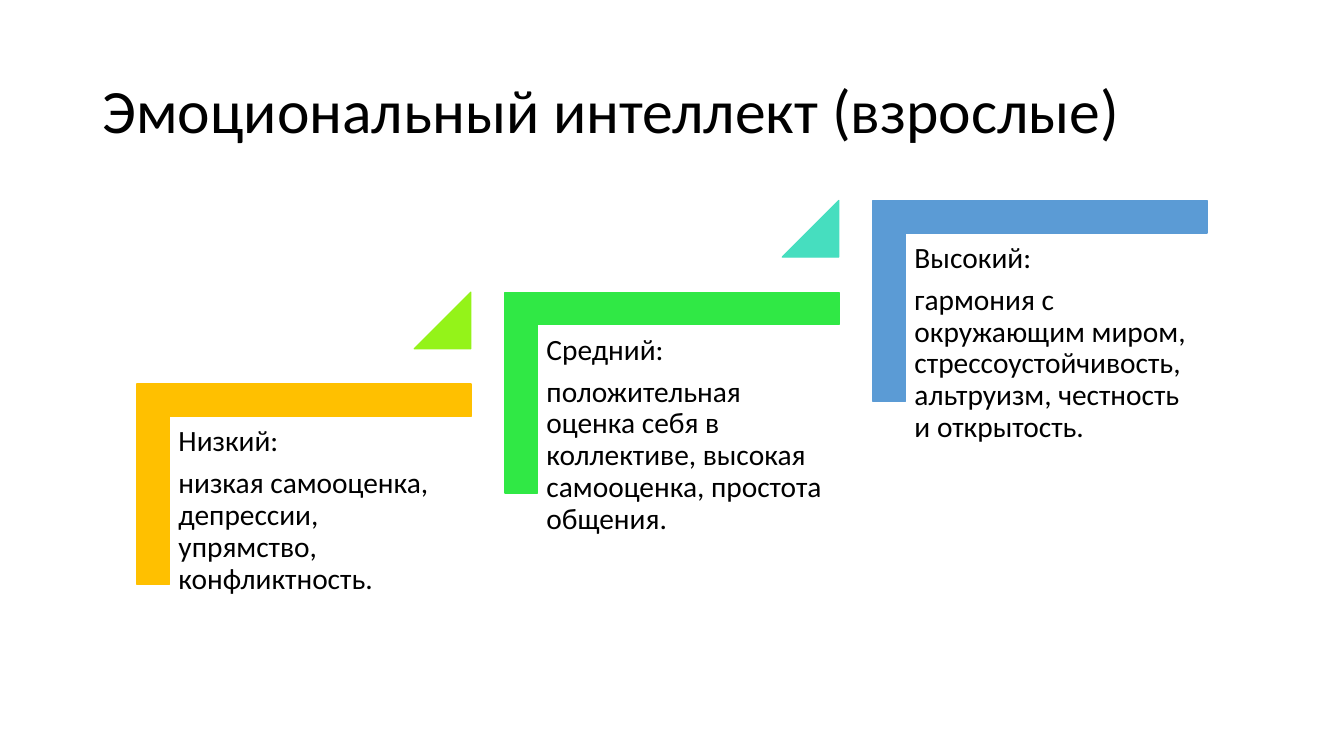
from pptx import Presentation
from pptx.dml.color import RGBColor
from pptx.enum.shapes import MSO_SHAPE
from pptx.enum.text import MSO_ANCHOR, PP_ALIGN
from pptx.util import Pt

PX = 9144
BLACK = RGBColor(0x00, 0x00, 0x00)
AMBER = RGBColor(0xFF, 0xC0, 0x00)
LIME = RGBColor(0x94, 0xF3, 0x19)
GREEN = RGBColor(0x30, 0xE8, 0x45)
TEAL = RGBColor(0x46, 0xDE, 0xBF)
BLUE = RGBColor(0x5B, 0x9B, 0xD5)

deck = Presentation()
deck.slide_width = 1333 * PX
deck.slide_height = 750 * PX
slide = deck.slides.add_slide(deck.slide_layouts[6])


def add_text(box, lines, size, inset, after):
    shape = slide.shapes.add_textbox(*[n * PX for n in box])
    frame = shape.text_frame
    frame.word_wrap = True
    frame.margin_left = frame.margin_right = inset[0] * PX
    frame.margin_top = frame.margin_bottom = inset[1] * PX
    frame.text = "\n".join(lines)
    for para in frame.paragraphs:
        para.alignment = PP_ALIGN.LEFT
        para.line_spacing = 0.9
        para.space_after = Pt(after)
        para.font.name = "Calibri"
        para.font.size = Pt(size)
        para.font.color.rgb = BLACK
    return frame


def add_block(kind, box, color, adjust):
    shape = slide.shapes.add_shape(kind, *[n * PX for n in box])
    for i, value in enumerate(adjust):
        shape.adjustments[i] = value
    shape.shadow.inherit = False
    shape.fill.solid()
    shape.fill.fore_color.rgb = color
    shape.line.color.rgb = color
    shape.line.width = Pt(1)
    return shape


title = add_text((92, 40, 1150, 145), ["Эмоциональный интеллект (взрослые)"], 44, (10, 5), 0)
title.vertical_anchor = MSO_ANCHOR.MIDDLE

steps = [
    ("Низкий:", "низкая самооценка, депрессии, упрямство, конфликтность.", AMBER, LIME),
    ("Средний:", "положительная оценка себя в коллективе, высокая самооценка, простота общения.", GREEN, TEAL),
    ("Высокий:", "гармония с окружающим миром, стрессоустойчивость, альтруизм, честность и открытость.", BLUE, None),
]

for i, (level, traits, color, accent) in enumerate(steps):
    left = 168 + 365 * i
    top = 414 - 91 * i
    corner = add_block(MSO_SHAPE.CORNER, (left + 34, top - 99, 199, 331), color, (0.161, 0.161))
    corner.rotation = 90
    add_text((left, top, 299, 262), [level, traits], 21, (9, 9), 7.35)
    if accent:
        add_block(MSO_SHAPE.ISOSCELES_TRIANGLE, (left + 243, top - 124, 56, 56), accent, (1,))

deck.save("out.pptx")
